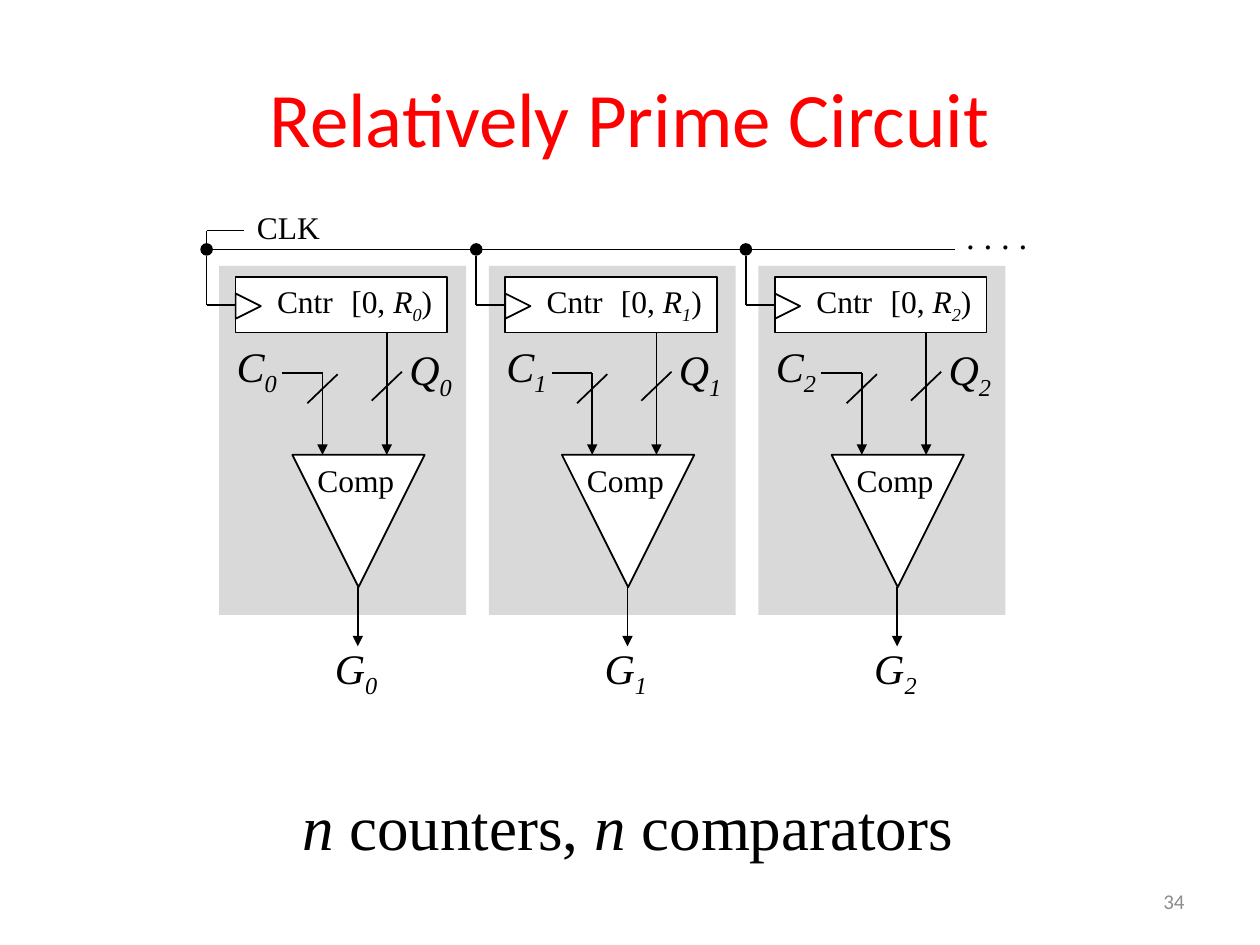
"""Build the slide showing a relatively prime circuit of counters and comparators."""
from dataclasses import dataclass

from lxml import etree
from pptx import Presentation
from pptx.dml.color import RGBColor
from pptx.enum import shapes, text
from pptx.oxml import ns
from pptx.util import Pt


@dataclass(frozen=True)
class Theme:
    ink: str = "000000"
    paper: str = "FFFFFF"
    panel: str = "D9D9D9"
    title: str = "FF0000"
    muted: str = "8C8C8C"
    sans: str = "Calibri"
    serif: str = "Times New Roman"
    title_size: int = 44
    caption_size: int = 36
    signal_size: int = 24
    dots_size: int = 20
    label_size: int = 18
    number_size: int = 12
    stroke: int = 1


theme = Theme()
PX = 9144
STAGES = 3
PITCH = 214

deck = Presentation()
deck.slide_width, deck.slide_height = 1000 * PX, 750 * PX
page = deck.slides.add_slide(deck.slide_layouts[5])


def write(pieces, left, top, width, height, size, wrap=True):
    box = page.shapes.add_textbox(left * PX, top * PX, width * PX, height * PX)
    box.text_frame.word_wrap = wrap
    para = box.text_frame.paragraphs[0]
    for words, style in pieces:
        span = para.add_run()
        span.text = words
        span.font.name, span.font.size = theme.serif, Pt(size)
        span.font.color.rgb = RGBColor.from_string(theme.ink)
        span.font.italic = style != "plain"
        if style == "subscript":
            span.font._element.set("baseline", "-25000")
    return box


def draw_line(x1, y1, x2, y2, arrow=False):
    line = page.shapes.add_connector(
        shapes.MSO_CONNECTOR.STRAIGHT, x1 * PX, y1 * PX, x2 * PX, y2 * PX)
    line.line.color.rgb = RGBColor.from_string(theme.ink)
    line.line.width = Pt(theme.stroke)
    if arrow:
        etree.SubElement(line.line._get_or_add_ln(), ns.qn("a:tailEnd"), type="triangle")
    etree.SubElement(line._element.spPr, ns.qn("a:effectLst"))
    return line


title = page.shapes.title
title.left, title.top, title.width, title.height = 50 * PX, 30 * PX, 900 * PX, 125 * PX
title.text_frame.text = "Relatively Prime Circuit"
title.text_frame.vertical_anchor = text.MSO_ANCHOR.MIDDLE
para = title.text_frame.paragraphs[0]
para.alignment = text.PP_ALIGN.CENTER
para.runs[0].font.name, para.runs[0].font.size = theme.sans, Pt(theme.title_size)
para.runs[0].font.color.rgb = RGBColor.from_string(theme.title)

kinds = shapes.MSO_SHAPE
stage_shapes = [
    ("panel", kinds.RECTANGLE, 174, 211, 196, 277, 0, theme.panel, False),
    ("counter", kinds.RECTANGLE, 187, 220, 168, 44, 0, theme.paper, True),
    ("clock input", kinds.ISOSCELES_TRIANGLE, 187, 233, 20, 20, 90, theme.paper, True),
    ("comparator", kinds.ISOSCELES_TRIANGLE, 232, 361, 105, 105, 180, theme.paper, True),
    ("clock node", kinds.OVAL, 159, 193, 10, 10, 0, theme.ink, False),
]
stage_lines = [
    (164, 203, 164, 242, False),
    (224, 296, 256, 296, False),
    (256, 296, 256, 361, True),
    (307, 264, 307, 361, True),
    (244, 320, 268, 297, False),
    (295, 318, 319, 295, False),
    (284, 466, 284, 513, True),
]
signals = [("C", 178, 265), ("Q", 315, 268), ("G", 256, 505)]

for stage in range(STAGES):
    shift = stage * PITCH
    drawn = {}
    for name, kind, left, top, width, height, turn, fill, outlined in stage_shapes:
        shape = page.shapes.add_shape(
            kind, (left + shift) * PX, top * PX, width * PX, height * PX)
        shape.name = f"{name} {stage}"
        shape.rotation = turn
        shape.shadow.inherit = False
        shape.fill.solid()
        shape.fill.fore_color.rgb = RGBColor.from_string(fill)
        if outlined:
            shape.line.color.rgb = RGBColor.from_string(theme.ink)
            shape.line.width = Pt(theme.stroke)
        else:
            shape.line.fill.background()
        drawn[name] = shape

    for x1, y1, x2, y2, arrow in stage_lines:
        draw_line(x1 + shift, y1, x2 + shift, y2, arrow)
    clock_feed = draw_line(164 + shift, 242, 187 + shift, 242)
    clock_feed.end_connect(drawn["counter"], 1)

    index = (str(stage), "subscript")
    write([("Cntr", "plain")], 210 + shift, 219, 81, 40, theme.label_size)
    write([("[0, ", "plain"), ("R", "italic"), index, (")", "plain")],
          269 + shift, 219, 86, 40, theme.label_size, wrap=False)
    write([("Comp", "plain")], 242 + shift, 361, 100, 40, theme.label_size)
    for letter, left, top in signals:
        write([(letter, "italic"), index], left + shift, top, 74, 50, theme.signal_size)

draw_line(164, 198, 758, 198)
draw_line(164, 183, 164, 198)
draw_line(164, 183, 194, 183)
write([("CLK", "plain")], 194, 160, 79, 40, theme.label_size)
write([(". . . .", "plain")], 757, 165, 113, 44, theme.dots_size)

write([("n", "italic"), (" counters, ", "plain"), ("n", "italic"), (" comparators", "plain")],
      230, 620, 555, 71, theme.caption_size)

number = write([("34", "plain")], 717, 695, 233, 40, theme.number_size)
number.text_frame.vertical_anchor = text.MSO_ANCHOR.MIDDLE
para = number.text_frame.paragraphs[0]
para.alignment = text.PP_ALIGN.RIGHT
para.runs[0].font.name = theme.sans
para.runs[0].font.color.rgb = RGBColor.from_string(theme.muted)

deck.save("out.pptx")
